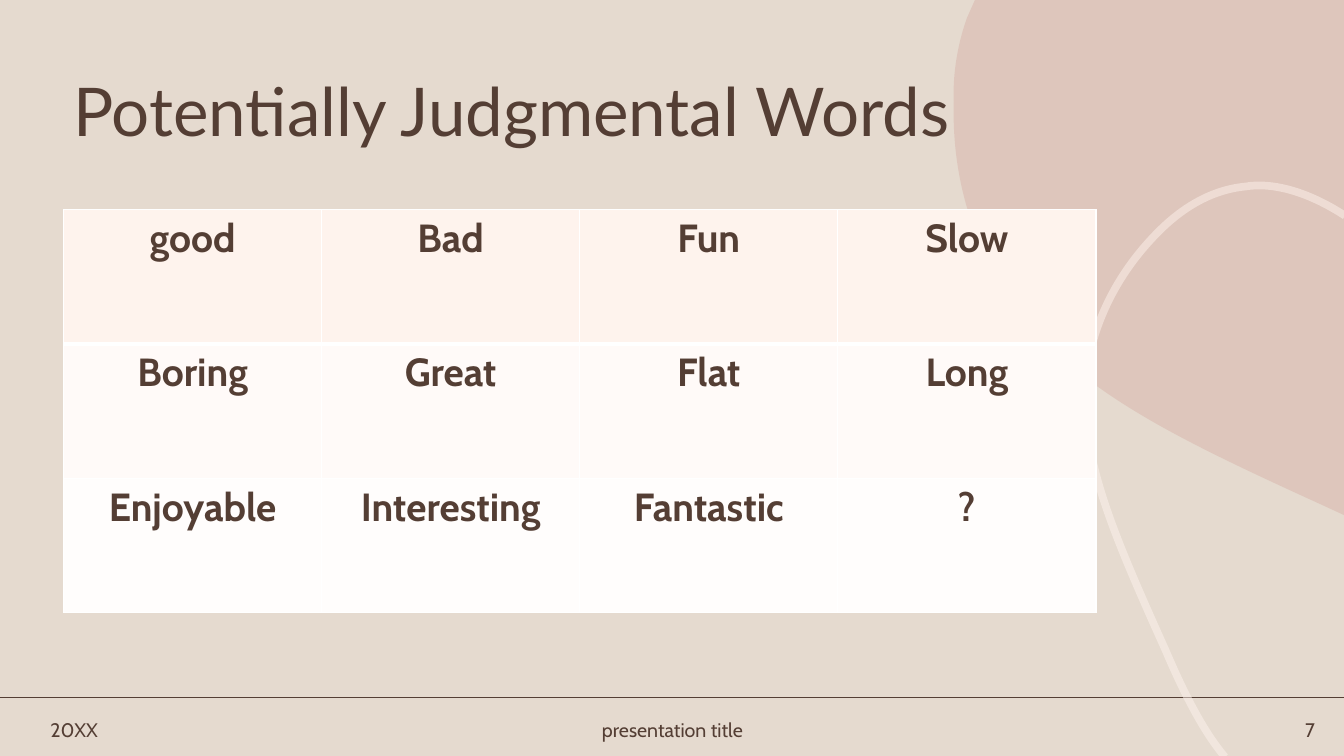
from lxml.etree import SubElement
from pptx import Presentation
from pptx.dml.color import RGBColor
from pptx.enum.shapes import MSO_CONNECTOR
from pptx.enum.text import MSO_ANCHOR, PP_ALIGN
from pptx.oxml.ns import qn
from pptx.util import Inches, Pt

BROWN, CREAM, ROSE, WHITE = "543E34", "FEF3ED", "CF9B92", "FFFFFF"
ROW_FILLS = [CREAM, "FFFAF8", "FFFDFC"]
WORDS = [
    ["good", "Bad", "Fun", "Slow"],
    ["Boring", "Great", "Flat", "Long"],
    ["Enjoyable", "Interesting", "Fantastic", "?"],
]
# Outlines relative to their box: one point is a line end, three are a Bézier curve.
BLOB = [
    [(0.21, 0)], [(3.87, 0)], [(3.87, 5.11)], [(3.61, 4.99)],
    [(1.9, 4.21), (0.86, 3.69), (0.32, 2.55)],
    [(0.02, 1.93), (-0.01, 1.35), (0, 1.01)],
    [(-0.01, 0.79), (0.02, 0.49), (0.13, 0.18)],
]
LOOP = [
    [(1.38, 5.67)],
    [(1.21, 5.47), (1.02, 5.15), (0.79, 4.61)],
    [(0.17, 3.23), (-0.19, 2.4), (0.09, 1.48)],
    [(0.24, 1.01), (0.5, 0.69), (0.67, 0.51)],
    [(0.84, 0.33), (1.15, 0.05), (1.59, 0.01)],
    [(1.64, 0), (1.7, 0), (1.75, 0)],
    [(2.02, 0.01), (2.31, 0.13), (2.57, 0.3)],
]


def rgb(color):
    return RGBColor.from_string(color)


def set_alpha(fill_parent, percent):
    """Make the solid fill inside an spPr or ln element translucent."""
    clr = fill_parent.find(qn("a:solidFill")).find(qn("a:srgbClr"))
    SubElement(clr, qn("a:alpha")).set("val", str(percent * 1000))


def add_outline(s, x, y, outline, close):
    """Build a freeform through the end points, then bend its curved segments."""
    parts = [[(Inches(x + dx), Inches(y + dy)) for dx, dy in part] for part in outline]
    ends = [part[-1] for part in parts]
    builder = s.shapes.build_freeform(*ends[0], scale=1.0)
    builder.add_line_segments(ends[1:], close=close)
    shape = builder.convert_to_shape()
    shape.shadow.inherit = False
    segments = list(shape._element.spPr.iter(qn("a:lnTo")))
    for segment, part in zip(segments, parts[1:]):
        if len(part) == 3:
            segment.tag = qn("a:cubicBezTo")
            segment.remove(segment[0])
            for px, py in part:
                SubElement(segment, qn("a:pt"), x=str(px - shape.left), y=str(py - shape.top))
    return shape


def add_run(p, text, font, size, bold=False):
    r = p.add_run()
    r.text = text
    r.font.name, r.font.size, r.font.bold = font, Pt(size), bold
    r.font.color.rgb = rgb(BROWN)


def add_text(s, x, y, w, h, text, font, size, align=PP_ALIGN.LEFT, spacing=1.0):
    tf = s.shapes.add_textbox(Inches(x), Inches(y), Inches(w), Inches(h)).text_frame
    tf.word_wrap = True
    tf.vertical_anchor = MSO_ANCHOR.MIDDLE
    p = tf.paragraphs[0]
    p.alignment, p.line_spacing = align, spacing
    add_run(p, text, font, size)


def add_backdrop(s):
    s.background.fill.solid()
    s.background.fill.fore_color.rgb = rgb("E5DACF")

    rule = s.shapes.add_connector(
        MSO_CONNECTOR.STRAIGHT, 0, Inches(6.92), Inches(13.33), Inches(6.92))
    rule.line.color.rgb = rgb(BROWN)
    rule.line.width = Pt(1.25)
    SubElement(rule._element.spPr, qn("a:effectLst"))

    blob = add_outline(s, 9.46, 0, BLOB, close=True)
    blob.fill.solid()
    blob.fill.fore_color.rgb = rgb(ROSE)
    set_alpha(blob._element.spPr, 30)
    blob.line.fill.background()

    loop = add_outline(s, 10.77, 1.84, LOOP, close=False)
    loop.fill.background()
    loop.line.color.rgb = rgb(CREAM)
    loop.line.width = Pt(5.5)
    set_alpha(loop._element.spPr.find(qn("a:ln")), 50)


def set_borders(cell, **widths):
    tc_pr = cell._tc.get_or_add_tcPr()
    for side, width in widths.items():
        ln = SubElement(tc_pr, qn(f"a:ln{side}"), w=str(Pt(width)))
        SubElement(SubElement(ln, qn("a:solidFill")), qn("a:srgbClr"), val=WHITE)


def add_word_table(s, x, y, w, h):
    frame = s.shapes.add_table(
        len(WORDS), len(WORDS[0]), Inches(x), Inches(y), Inches(w), Inches(h))
    table = frame.table
    table.first_row = table.horz_banding = False
    for i, (words, color) in enumerate(zip(WORDS, ROW_FILLS)):
        for j, word in enumerate(words):
            cell = table.cell(i, j)
            set_borders(cell, L=1, R=1, T=3 if i == 1 else 1, B=3 if i == 0 else 1)
            cell.fill.solid()
            cell.fill.fore_color.rgb = rgb(color)
            p = cell.text_frame.paragraphs[0]
            p.alignment = PP_ALIGN.CENTER
            add_run(p, word, "Cabin", 28, bold=True)


def add_footer(s, y, h):
    for x, w, text, align in [
        (0.4, 1.08, "20XX", PP_ALIGN.LEFT),
        (4.79, 3.76, "presentation title", PP_ALIGN.CENTER),
        (12.06, 1.08, "7", PP_ALIGN.RIGHT),
    ]:
        add_text(s, x, y, w, h, text, "Cabin", 14, align)


def main():
    prs = Presentation()
    prs.slide_width, prs.slide_height = Inches(13.33), Inches(7.5)
    s = prs.slides.add_slide(prs.slide_layouts[6])
    add_backdrop(s)
    add_text(s, 0.63, 0.77, 11.5, 0.74, "Potentially Judgmental Words", "Lato", 48, spacing=0.9)
    add_word_table(s, 0.63, 2.08, 10.24, 4)
    add_footer(s, 7.07, 0.34)
    prs.save("out.pptx")


if __name__ == "__main__":
    main()
